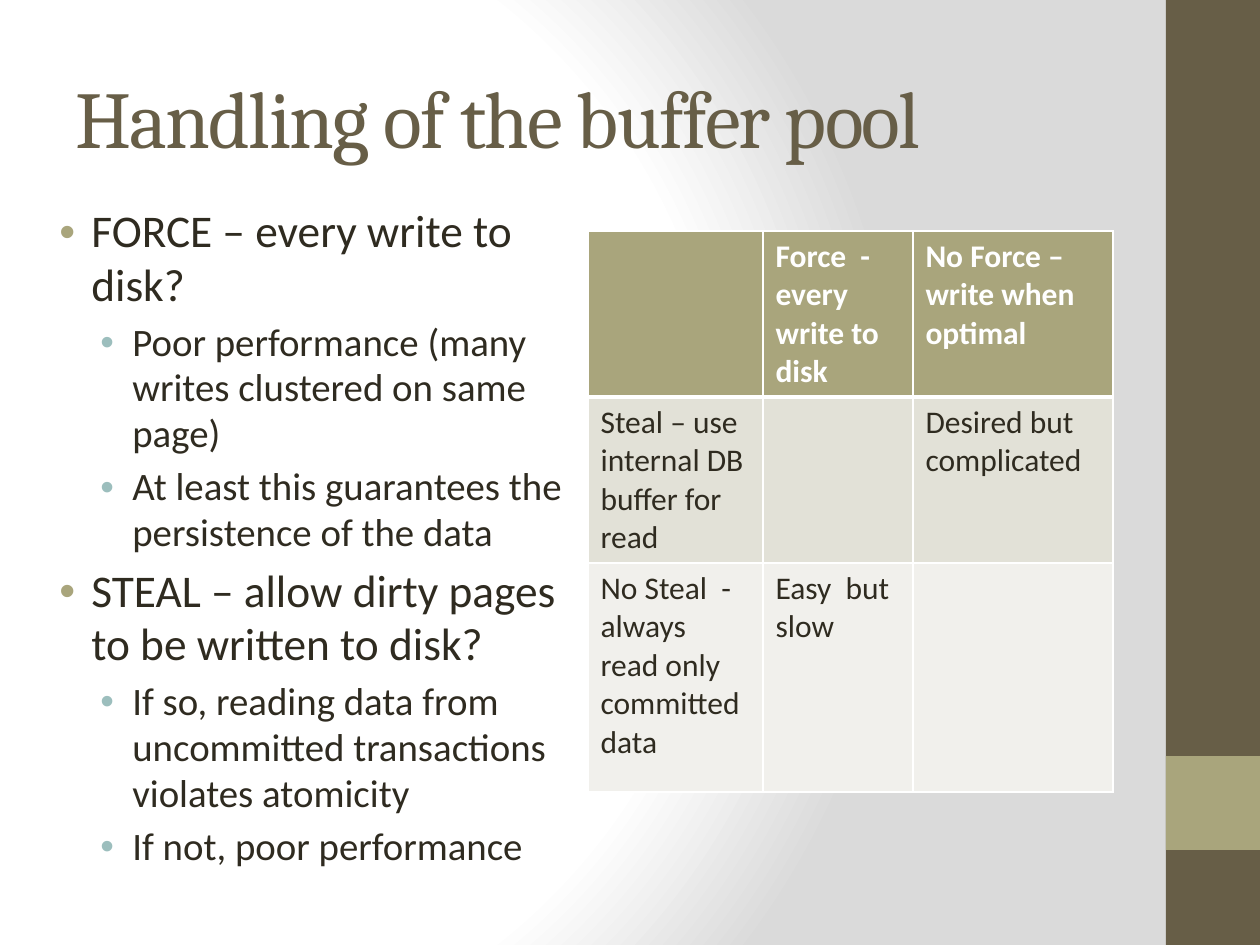
"""Build the slide on handling of the buffer pool."""
import lxml.etree
import pptx
import pptx.dml.color
import pptx.enum.shapes
import pptx.enum.text
import pptx.oxml
import pptx.oxml.ns
import pptx.util

RGB = pptx.dml.color.RGBColor
BROWN = RGB(0x67, 0x5E, 0x47)
OLIVE = RGB(0xA9, 0xA5, 0x7C)
TEAL = RGB(0x9C, 0xBE, 0xBD)
INK = RGB(0x2F, 0x2B, 0x20)
WHITE = RGB(0xFF, 0xFF, 0xFF)
GREY = RGB(0xDA, 0xDA, 0xDA)
BAND_DARK = RGB(0xE2, 0xE1, 0xD7)
BAND_LIGHT = RGB(0xF1, 0xF0, 0xEC)

EMU_PER_PX = 914400 / 126
EMU_PER_PT = 12700

BULLETS = [
    (0, "FORCE – every write to disk?"),
    (1, "Poor performance (many writes clustered on same page)"),
    (1, "At least this guarantees the persistence of the data"),
    (0, "STEAL – allow dirty pages to be written to disk?"),
    (1, "If so, reading data from uncommitted transactions violates atomicity"),
    (1, "If not, poor performance"),
]
LEVELS = [
    {"size": 25.9, "color": OLIVE, "indent": 47},
    {"size": 22.2, "color": TEAL, "indent": 88},
]
HANGING = 32

COLUMN_WIDTHS = [175, 150, 200]
ROW_HEIGHTS = [166, 166, 229]
ROW_FILLS = [OLIVE, BAND_DARK, BAND_LIGHT]
ROWS = [
    ["", "Force  - every write to disk", "No Force – write when optimal"],
    ["Steal – use internal DB buffer for read", "", "Desired but complicated"],
    ["No Steal  - always read only committed data", "Easy  but slow", ""],
]


def px(length):
    """Turn pixels into EMU."""
    return pptx.util.Emu(round(length * EMU_PER_PX))


def parse_xml(text):
    """Parse a DrawingML fragment whose prefix is a."""
    head, tail = text.split(">", 1)
    slash = "/" if head.endswith("/") else ""
    head = head.rstrip("/")
    return pptx.oxml.parse_xml(f"{head} {pptx.oxml.ns.nsdecls('a')}{slash}>{tail}")


def write_text(para, text, size=18, font="Calibri", color=INK, bold=False, tracking=0):
    """Add formatted text to a paragraph."""
    span = para.add_run()
    span.text = text
    span.font.size = pptx.util.Pt(size)
    span.font.name = font
    span.font.color.rgb = color
    span.font.bold = bold
    if tracking:
        span.font._element.set("spc", str(tracking * 100))


def set_background(page):
    """Fill the page with a circular gradient from white to grey."""
    page.background.fill.solid()
    solid = page.element.xpath("./p:cSld/p:bg/p:bgPr/a:solidFill")[0]
    stops = "".join(
        f'<a:gs pos="{place * 1000}"><a:srgbClr val="{color}"/></a:gs>'
        for place, color in [(0, WHITE), (75, WHITE), (100, GREY)]
    )
    gradient = parse_xml(
        f'<a:gradFill rotWithShape="1"><a:gsLst>{stops}</a:gsLst><a:path path="circle">'
        '<a:fillToRect l="20000" t="50000" r="100000" b="50000"/></a:path></a:gradFill>'
    )
    solid.getparent().replace(solid, gradient)


def add_panel(page, left, top, width, height, color):
    """Add a plain filled rectangle."""
    panel = page.shapes.add_shape(
        pptx.enum.shapes.MSO_SHAPE.RECTANGLE, px(left), px(top), px(width), px(height)
    )
    panel.shadow.inherit = False
    panel.fill.solid()
    panel.fill.fore_color.rgb = color
    panel.line.fill.background()


def add_text_frame(page, left, top, width, height):
    """Add a wrapping text box and return its frame."""
    box = page.shapes.add_textbox(px(left), px(top), px(width), px(height))
    box.text_frame.word_wrap = True
    return box.text_frame


def add_title(page, text):
    """Add the slide title."""
    frame = add_text_frame(page, 63, 38, 1050, 157)
    frame.vertical_anchor = pptx.enum.text.MSO_ANCHOR.MIDDLE
    write_text(frame.paragraphs[0], text, size=46, font="Cambria", color=BROWN, tracking=-1)


def set_bullet(para, color, indent):
    """Give a paragraph a coloured bullet with a hanging indent."""
    properties = para._p.get_or_add_pPr()
    properties.set("marL", str(px(indent)))
    properties.set("indent", str(px(-HANGING)))
    for fragment in (
        f'<a:buClr><a:srgbClr val="{color}"/></a:buClr>',
        '<a:buFont typeface="Arial"/>',
        '<a:buChar char="•"/>',
    ):
        properties.append(parse_xml(fragment))


def add_bullets(page, items):
    """Add the two-level bullet list."""
    frame = add_text_frame(page, 32, 199, 556, 672)
    for number, (level, text) in enumerate(items):
        para = frame.add_paragraph() if number else frame.paragraphs[0]
        style = LEVELS[level]
        para.level = level
        para.line_spacing = 0.98
        para.space_before = pptx.util.Pt(round(style["size"] * 0.2, 1))
        set_bullet(para, style["color"], style["indent"])
        write_text(para, text, size=style["size"])


def set_borders(cell, top, bottom):
    """Draw white borders round a cell, with top and bottom widths in points."""
    properties = cell._tc.get_or_add_tcPr()
    sides = [("L", 1), ("R", 1), ("T", top), ("B", bottom)]
    for place, (side, width) in enumerate(sides):
        border = parse_xml(
            f'<a:ln{side} w="{width * EMU_PER_PT}"><a:solidFill>'
            f'<a:srgbClr val="{WHITE}"/></a:solidFill></a:ln{side}>'
        )
        properties.insert(place, border)


def add_policy_table(page):
    """Add the table of force and steal policies."""
    table = page.shapes.add_table(
        len(ROWS), len(COLUMN_WIDTHS), px(588), px(231),
        px(sum(COLUMN_WIDTHS)), px(sum(ROW_HEIGHTS)),
    ).table
    for column, width in zip(table.columns, COLUMN_WIDTHS):
        column.width = px(width)
    for number, (row, height, texts) in enumerate(zip(table.rows, ROW_HEIGHTS, ROWS)):
        row.height = px(height)
        header = number == 0
        for cell, text in zip(row.cells, texts):
            cell.fill.solid()
            cell.fill.fore_color.rgb = ROW_FILLS[number]
            set_borders(cell, top=3 if number == 1 else 1, bottom=3 if header else 1)
            if text:
                write_text(cell.text_frame.paragraphs[0], text,
                           color=WHITE if header else INK, bold=header)


def main():
    """Build and save the deck."""
    deck = pptx.Presentation()
    deck.slide_width, deck.slide_height = px(1260), px(945)
    page = deck.slides.add_slide(deck.slide_layouts[6])
    set_background(page)
    add_panel(page, 1166, 0, 94, 945, BROWN)
    add_panel(page, 1166, 756, 94, 94, OLIVE)
    add_title(page, "Handling of the buffer pool")
    add_bullets(page, BULLETS)
    add_policy_table(page)
    deck.save("out.pptx")


if __name__ == "__main__":
    main()
